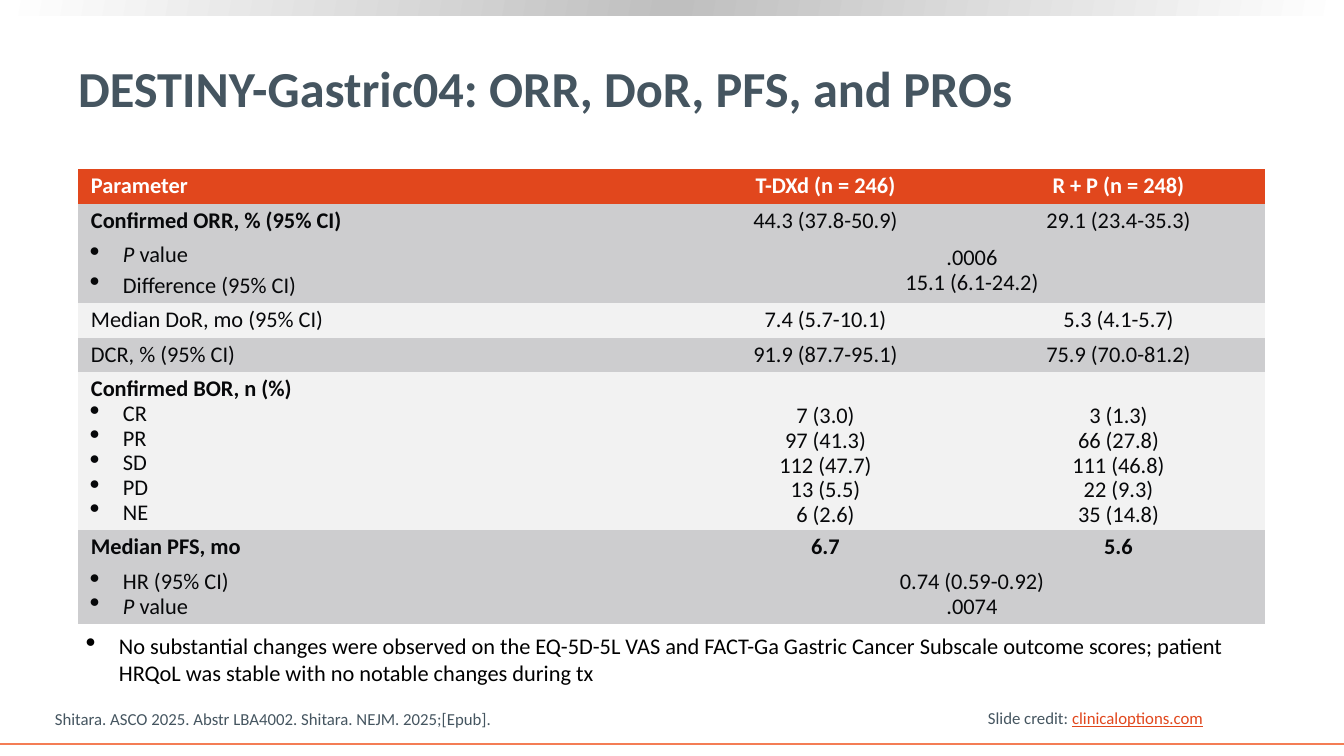
from copy import deepcopy

from lxml.etree import SubElement
from pptx import Presentation
from pptx.dml.color import RGBColor
from pptx.enum.shapes import MSO_CONNECTOR, MSO_SHAPE
from pptx.enum.text import MSO_ANCHOR, PP_ALIGN
from pptx.oxml.ns import qn
from pptx.util import Emu, Pt

COLORS = {
    "white": "FFFFFF", "silver": "BFBFBF", "rule": "F47D55", "slate": "455560",
    "orange": "E1471D", "ink": "07080A", "black": "000000",
    "dark row": "CDCDCF", "light row": "F2F2F2",
}
FONT = "Calibri"
TITLE = "DESTINY-Gastric04: ORR, DoR, PFS, and PROs"
NOTE = ("No substantial changes were observed on the EQ-5D-5L VAS and FACT-Ga Gastric Cancer "
        "Subscale outcome scores; patient HRQoL was stable with no notable changes during tx")
CITATION = "Shitara. ASCO 2025. Abstr LBA4002. Shitara. NEJM. 2025;[Epub]."
CREDIT, CREDIT_SITE = "Slide credit: ", "clinicaloptions.com"

COLUMN_WIDTHS = [601, 293, 293]
# height, fill, heading, bullets, value columns (a single one spans both), bold heading, bold values
ROWS = [
    (34, "orange", "Parameter", [], [["T-DXd (n = 246)"], ["R + P (n = 248)"]], True, True),
    (34, "dark row", "Confirmed ORR, % (95% CI)", [],
     [["44.3 (37.8-50.9)"], ["29.1 (23.4-35.3)"]], True, False),
    (64, "dark row", None, ["P value", "Difference (95% CI)"],
     [[".0006", "15.1 (6.1-24.2)"]], False, False),
    (34, "light row", "Median DoR, mo (95% CI)", [],
     [["7.4 (5.7-10.1)"], ["5.3 (4.1-5.7)"]], False, False),
    (34, "dark row", "DCR, % (95% CI)", [],
     [["91.9 (87.7-95.1)"], ["75.9 (70.0-81.2)"]], False, False),
    (158, "light row", "Confirmed BOR, n (%)", ["CR", "PR", "SD", "PD", "NE"],
     [["7 (3.0)", "97 (41.3)", "112 (47.7)", "13 (5.5)", "6 (2.6)"],
      ["3 (1.3)", "66 (27.8)", "111 (46.8)", "22 (9.3)", "35 (14.8)"]], True, False),
    (34, "dark row", "Median PFS, mo", [], [["6.7"], ["5.6"]], True, True),
    (58, "dark row", None, ["HR (95% CI)", "P value"],
     [["0.74 (0.59-0.92)", ".0074"]], False, False),
]
WIDE_GAP_ROW = 2
NO_GRID_STYLE = "{2D5ABB26-0587-4C30-8999-92F81FD0307C}"


def px(length):
    return Emu(round(length * 914400 / 100.8))


def box(*lengths):
    return [px(length) for length in lengths]


def rgb(name):
    return RGBColor.from_string(COLORS[name])


def set_font(paragraph, size, color, bold=False):
    font = paragraph.font
    font.name, font.size, font.bold = FONT, Pt(size), bold
    font.color.rgb = rgb(color)


def add_bullet(paragraph):
    properties = paragraph._p.get_or_add_pPr()
    properties.set("marL", str(px(32)))
    properties.set("indent", str(-px(32)))
    SubElement(properties, qn("a:buFont"), typeface="Wingdings 2")
    SubElement(properties, qn("a:buChar"), char="▪")


def add_runs(paragraph, text):
    """Add the text, with the statistical P in italics."""
    if text.startswith("P "):
        paragraph.add_run().text = "P"
        paragraph.runs[0].font.italic = True
        text = text[1:]
    paragraph.add_run().text = text


def fill_cell(cell, lines, color, centered=False, gap=0):
    """Write lines given as (text, bold, bulleted)."""
    cell.margin_left = cell.margin_right = px(13)
    cell.margin_top = cell.margin_bottom = px(5)
    for index, (text, bold, bulleted) in enumerate(lines):
        frame = cell.text_frame
        paragraph = frame.add_paragraph() if index else frame.paragraphs[0]
        if bulleted:
            add_bullet(paragraph)
        paragraph.alignment = PP_ALIGN.CENTER if centered else PP_ALIGN.LEFT
        paragraph.line_spacing = 0.9
        if index and gap:
            paragraph.space_before = Pt(gap)
        set_font(paragraph, 16, color, bold)
        add_runs(paragraph, text)


def add_results_table(slide):
    heights = [row[0] for row in ROWS]
    frame = slide.shapes.add_table(len(ROWS), len(COLUMN_WIDTHS),
                                   *box(78, 169, sum(COLUMN_WIDTHS), sum(heights)))
    table = frame.table
    table.first_row = table.horz_banding = False
    table._tbl.tblPr.find(qn("a:tableStyleId")).text = NO_GRID_STYLE
    for column, width in zip(table.columns, COLUMN_WIDTHS):
        column.width = px(width)
    for index, (height, fill, heading, bullets, columns, bold_heading, bold) in enumerate(ROWS):
        table.rows[index].height = px(height)
        color = "white" if fill == "orange" else "ink"
        for cell in table.rows[index].cells:
            cell.fill.solid()
            cell.fill.fore_color.rgb = rgb(fill)
        if len(columns) == 1:
            table.cell(index, 1).merge(table.cell(index, 2))
        lines = [(heading, bold_heading, False)] if heading else []
        lines += [(text, False, True) for text in bullets]
        fill_cell(table.cell(index, 0), lines, color, gap=4 if index == WIDE_GAP_ROW else 0)
        for number, values in enumerate(columns, 1):
            cell = table.cell(index, number)
            fill_cell(cell, [(text, bold, False) for text in values], color, centered=True)
            below_heading = heading and bullets
            cell.vertical_anchor = MSO_ANCHOR.BOTTOM if below_heading else MSO_ANCHOR.MIDDLE
            if below_heading:
                cell.margin_bottom = px(3)


def add_top_band(slide):
    band = slide.shapes.add_shape(MSO_SHAPE.RECTANGLE, *box(0, 0, 1344, 16))
    band.shadow.inherit = False
    band.line.fill.background()
    band.fill.gradient()
    band.fill.gradient_angle = 170
    stop_list = band._element.spPr.find(qn("a:gradFill")).find(qn("a:gsLst"))
    stop_list.insert(1, deepcopy(stop_list[0]))
    for stop, place, color in zip(band.fill.gradient_stops, (0, 0.5, 1),
                                  ("white", "silver", "white")):
        stop.position = place
        stop.color.rgb = rgb(color)


def add_bottom_rule(slide):
    rule = slide.shapes.add_connector(MSO_CONNECTOR.STRAIGHT, *box(0, 744, 1344, 744))
    rule.line.color.rgb = rgb("rule")
    rule.line.width = Pt(1.5)
    SubElement(rule._element.spPr, qn("a:effectLst"))


def add_text(slide, place, text, size, color, bulleted=False, wrap=True):
    frame = slide.shapes.add_textbox(*box(*place)).text_frame
    frame.word_wrap = wrap
    paragraph = frame.paragraphs[0]
    if bulleted:
        add_bullet(paragraph)
    set_font(paragraph, size, color)
    paragraph.add_run().text = text
    return paragraph


def main():
    presentation = Presentation()
    presentation.slide_width, presentation.slide_height = box(1344, 756)
    slide = presentation.slides.add_slide(presentation.slide_layouts[5])
    add_top_band(slide)
    add_bottom_rule(slide)

    title = slide.shapes.title
    title.left, title.top, title.width, title.height = box(68, 26, 1199, 122)
    title.text_frame.text = TITLE
    title.text_frame.vertical_anchor = MSO_ANCHOR.MIDDLE
    heading = title.text_frame.paragraphs[0]
    heading.alignment = PP_ALIGN.LEFT
    set_font(heading, 36, "slate", bold=True)

    add_results_table(slide)
    add_text(slide, (77, 627, 1199, 65), NOTE, 16, "black", bulleted=True)
    add_text(slide, (45, 704, 883, 30), CITATION, 12, "slate")
    credit = add_text(slide, (978, 703, 238, 30), CREDIT, 12, "slate", wrap=False)
    site = credit.add_run()
    site.text = CREDIT_SITE
    site.font.underline = True
    site.font.color.rgb = rgb("orange")
    presentation.save("out.pptx")


if __name__ == "__main__":
    main()
